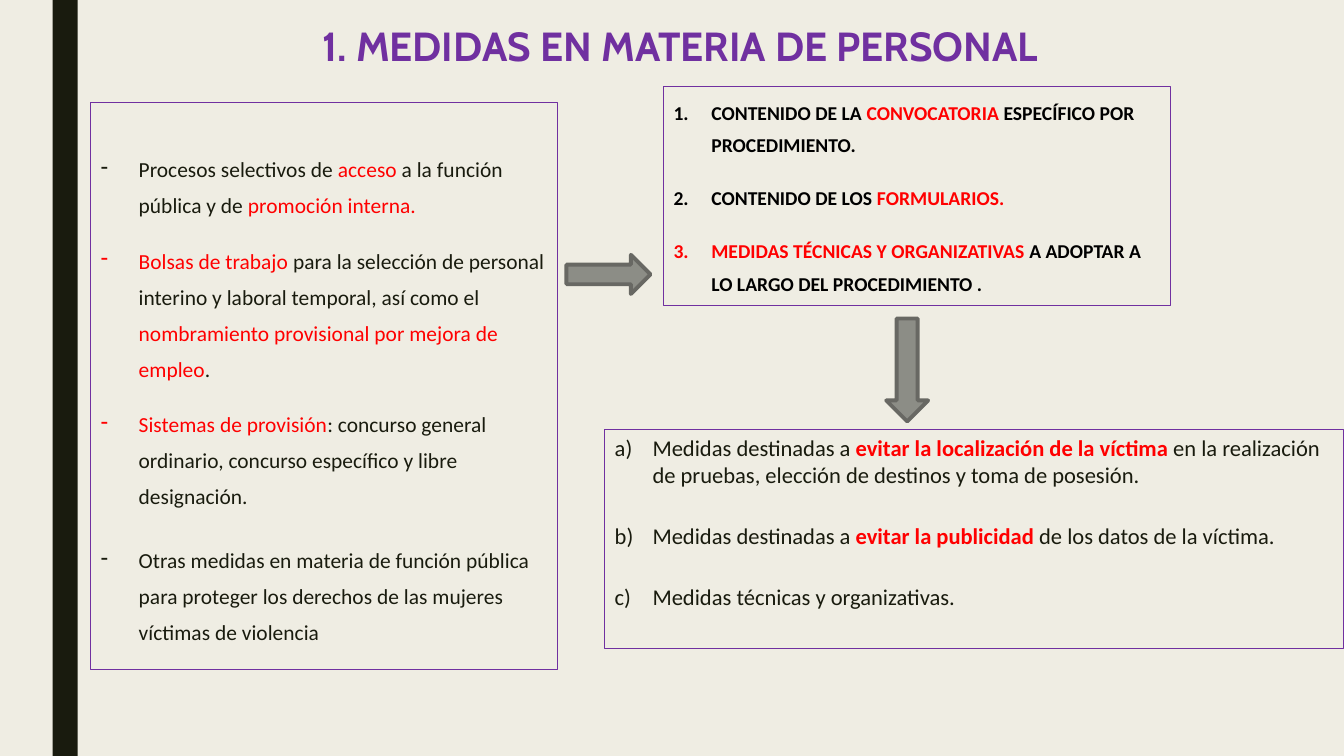
from lxml import etree
from pptx import Presentation
from pptx.dml.color import RGBColor
from pptx.enum.shapes import MSO_SHAPE
from pptx.enum.text import MSO_ANCHOR, PP_ALIGN
from pptx.oxml.ns import qn
from pptx.util import Pt

RECT = MSO_SHAPE.RECTANGLE
RIGHT = MSO_SHAPE.RIGHT_ARROW
DOWN = MSO_SHAPE.DOWN_ARROW
TOP = MSO_ANCHOR.TOP
MIDDLE = MSO_ANCHOR.MIDDLE
LEFT = PP_ALIGN.LEFT
CENTER = PP_ALIGN.CENTER

COLORS = {"back": "EFEDE3", "dark": "191B0E", "purple": "7030A0",
          "red": "FF0000", "black": "000000", "gray": "8C8D86", "edge": "686863"}
INDENT = Pt(27)

# Each item is a list of (text, colour) runs
SCOPE = [
    [("Procesos selectivos de ", "dark"), ("acceso", "red"),
     (" a la función pública y de ", "dark"), ("promoción interna.", "red")],
    [("Bolsas de trabajo ", "red"),
     ("para la selección de personal interino y laboral temporal, así como el ", "dark"),
     ("nombramiento provisional por mejora de empleo", "red"), (".", "dark")],
    [("Sistemas de provisión", "red"),
     (": concurso general ordinario, concurso específico y libre designación.", "dark")],
    [("Otras medidas en materia de función pública para proteger los derechos "
      "de las mujeres víctimas de violencia", "dark")],
]
CONTENT = [
    [("CONTENIDO DE LA ", "black"), ("CONVOCATORIA ", "red"),
     ("ESPECÍFICO POR PROCEDIMIENTO.", "black")],
    [("CONTENIDO DE LOS ", "black"), ("FORMULARIOS.", "red")],
    [("MEDIDAS TÉCNICAS Y ORGANIZATIVAS ", "red"),
     ("A ADOPTAR A LO LARGO DEL PROCEDIMIENTO .", "black")],
]
GOALS = [
    [("Medidas destinadas a ", "dark"), ("evitar la localización de la víctima ", "red"),
     ("en la realización de pruebas, elección de destinos y toma de posesión.", "dark")],
    [("Medidas destinadas a ", "dark"), ("evitar la publicidad ", "red"),
     ("de los datos de la víctima.", "dark")],
    [("Medidas técnicas y organizativas.", "dark")],
]


def rgb(name):
    return RGBColor.from_string(COLORS[name])


def add_run(para, text, size, color, font="Calibri", bold=False):
    run = para.add_run()
    run.text = text
    run.font.size = Pt(size)
    run.font.name = font
    run.font.bold = bold
    run.font.color.rgb = rgb(color)


def add_form(slide, kind, box, fill=None, line=None, width=0.75):
    form = slide.shapes.add_shape(kind, *map(Pt, box))
    form.shadow.inherit = False
    if fill:
        form.fill.solid()
        form.fill.fore_color.rgb = rgb(fill)
    else:
        form.fill.background()
    if line:
        form.line.color.rgb = rgb(line)
        form.line.width = Pt(width)
    else:
        form.line.fill.background()
    return form


def set_bullet(para, tag, **attrs):
    props = para._p.get_or_add_pPr()
    props.set("marL", str(INDENT))
    props.set("indent", str(-INDENT))
    etree.SubElement(props, qn("a:" + tag), **attrs)


def add_list(slide, box, items, size, bullet, space, after, before=12,
             bold=(), top=3.6):
    """Draw a framed list; bold names the colours set in bold,
    after holds the space below each item."""
    frame = add_form(slide, RECT, box, line="purple").text_frame
    frame.word_wrap = True
    frame.vertical_anchor = TOP
    frame.margin_top = Pt(top)
    for i, (runs, gap) in enumerate(zip(items, after)):
        para = frame.add_paragraph() if i else frame.paragraphs[0]
        para.alignment = LEFT
        para.line_spacing = space
        para.space_before = Pt(before)
        para.space_after = Pt(gap)
        tag, attrs = bullet
        set_bullet(para, tag, **attrs)
        for text, color in runs:
            add_run(para, text, size, color, bold=color in bold)


def add_title(slide, text, box):
    title = slide.shapes.title
    title.left, title.top, title.width, title.height = map(Pt, box)
    frame = title.text_frame
    frame.word_wrap = True
    frame.vertical_anchor = MIDDLE
    para = frame.paragraphs[0]
    para.alignment = CENTER
    para.line_spacing = 0.89
    add_run(para, text, 29, "purple", "Cabin", True)


def main():
    deck = Presentation()
    deck.slide_width, deck.slide_height = Pt(960), Pt(540)
    slide = deck.slides.add_slide(deck.slide_layouts[5])
    slide.background.fill.solid()
    slide.background.fill.fore_color.rgb = rgb("back")

    # Side band and title
    add_form(slide, RECT, (37.5, 0, 18, 540), fill="dark")
    add_title(slide, "1. MEDIDAS EN MATERIA DE PERSONAL ", (106.5, 13.5, 766, 42.5))

    # Framed lists
    add_list(slide, (65, 73.2, 333, 405.2), SCOPE, 15.3,
             ("buChar", {"char": "-"}), 1.4, (2, 2, 8, 8), top=31)
    add_list(slide, (474, 61.5, 362, 156.7), CONTENT, 14,
             ("buAutoNum", {"type": "arabicPeriod"}), 1.4, (2, 2, 2),
             bold=("black", "red"))
    add_list(slide, (432, 306.7, 528, 156.7), GOALS, 16.1,
             ("buAutoNum", {"type": "alphaLcParenR"}), 1, (14.2,) * 3,
             before=10, bold=("red",))

    # Arrows between the lists
    for kind, box in ((RIGHT, (404.6, 182, 60, 28)), (DOWN, (633, 227.5, 30, 73.5))):
        add_form(slide, kind, box, "gray", "edge", 2.75)

    deck.save("out.pptx")


if __name__ == "__main__":
    main()
